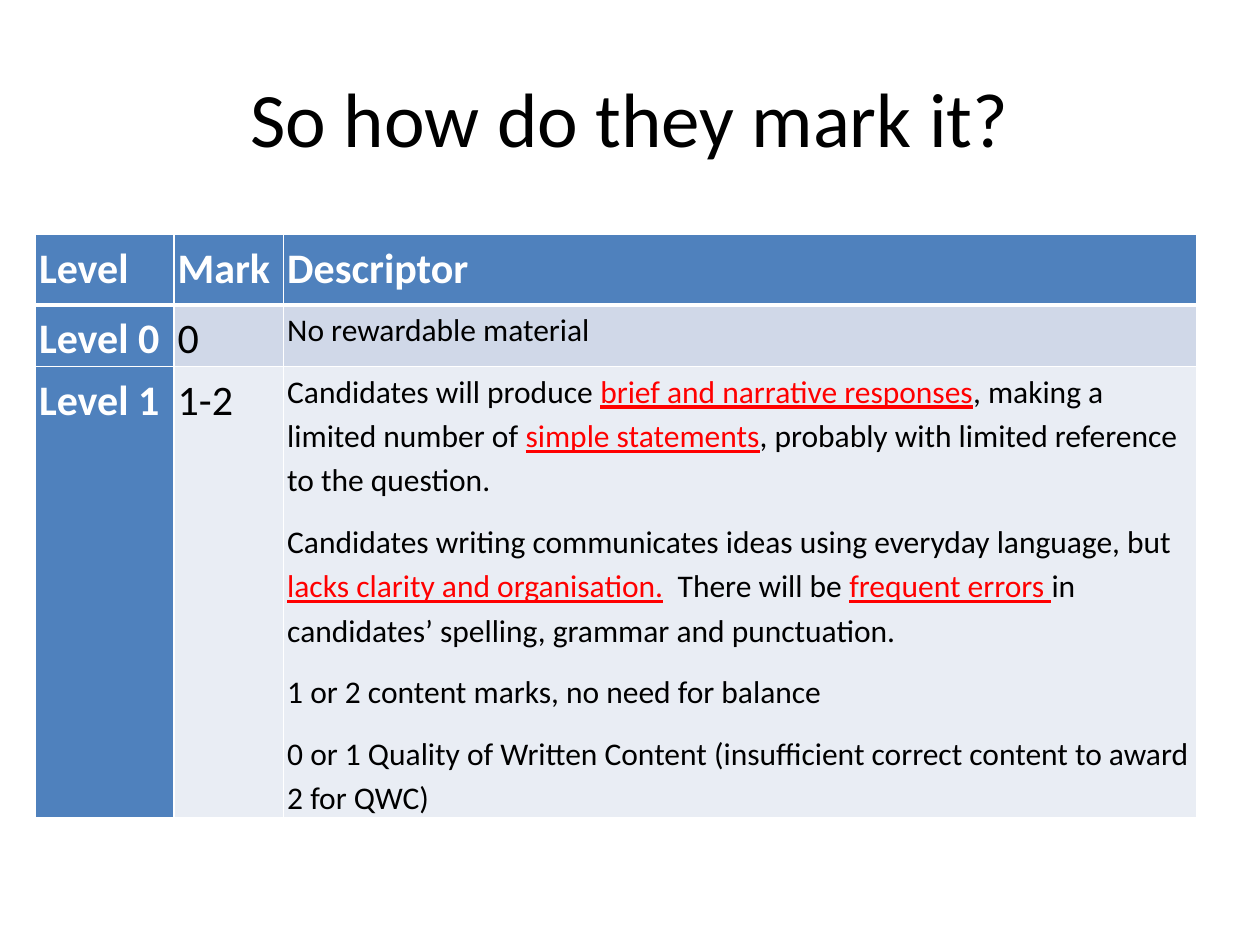
import pptx
import pptx.dml.color
import pptx.enum.text
import pptx.oxml
import pptx.oxml.ns
import pptx.util

Inches = pptx.util.Inches
Pt = pptx.util.Pt

COLORS = {
    "text": "000000",
    "white": "FFFFFF",
    "emphasis": "FF0000",
    "header": "4F81BD",
    "odd_row": "D0D8E8",
    "even_row": "E9EDF4",
}

LEVELS = [
    ("Level", "Mark", [["Descriptor"]]),
    ("Level 0", "0", [["No rewardable material"]]),
    ("Level 1", "1-2", [
        ["Candidates will produce ", "brief and narrative responses",
         ", making a limited number of ", "simple statements",
         ", probably with limited reference to the question."],
        ["Candidates writing communicates ideas using everyday language, but ",
         "lacks clarity and organisation.", "  There will be ", "frequent errors ",
         "in candidates’ spelling, grammar and punctuation."],
        ["1 or 2 content marks, no need for balance"],
        ["0 or 1 Quality of Written Content (insufficient correct content to award 2 for QWC)"],
    ]),
]
COLUMN_WIDTHS = [1.1, 0.87, 7.25]
ROW_HEIGHTS = [0.56, 0.49, 3.58]


def apply(target, values):
    for name, value in values.items():
        setattr(target, name, value)


class MarkSlide:
    font_name = "Calibri"
    cell_format = {
        "margin_left": Inches(0.03),
        "margin_top": Inches(0.01),
        "margin_right": Inches(0.03),
        "margin_bottom": 0,
        "vertical_anchor": pptx.enum.text.MSO_ANCHOR.TOP,
    }
    paragraph_format = {"line_spacing": 1.15, "space_after": Pt(10)}

    def __init__(self, slide):
        self.slide = slide

    def color(self, name):
        return pptx.dml.color.RGBColor.from_string(COLORS[name])

    def run(self, paragraph, text, size, color="text", **font_format):
        run = paragraph.add_run()
        run.text = text
        apply(run.font, {"name": self.font_name, "size": Pt(size), **font_format})
        run.font.color.rgb = self.color(color)

    def title(self, text, left, top, width, height):
        box = self.slide.shapes.add_textbox(
            Inches(left), Inches(top), Inches(width), Inches(height))
        apply(box.text_frame, {
            "word_wrap": True,
            "vertical_anchor": pptx.enum.text.MSO_ANCHOR.MIDDLE,
        })
        heading = box.text_frame.paragraphs[0]
        heading.alignment = pptx.enum.text.PP_ALIGN.CENTER
        self.run(heading, text, 44)

    def borders(self, cell, widths):
        properties = cell._tc.get_or_add_tcPr()
        for side, width in widths.items():
            properties.append(pptx.oxml.parse_xml(
                f'<a:ln{side} {pptx.oxml.ns.nsdecls("a")} w="{Pt(width)}">'
                f'<a:solidFill><a:srgbClr val="{COLORS["white"]}"/></a:solidFill>'
                f'</a:ln{side}>'))

    def cell(self, cell, paragraphs, fill, size, **font_format):
        cell.fill.solid()
        cell.fill.fore_color.rgb = self.color(fill)
        apply(cell, self.cell_format)
        for index, parts in enumerate(paragraphs):
            frame = cell.text_frame
            paragraph = frame.add_paragraph() if index else frame.paragraphs[0]
            apply(paragraph, self.paragraph_format)
            for position, text in enumerate(parts):
                if position % 2:
                    self.run(paragraph, text, size, "emphasis", underline=True)
                else:
                    self.run(paragraph, text, size, **font_format)

    def table(self, levels, left, top, widths, heights):
        table = self.slide.shapes.add_table(
            len(levels), len(widths), Inches(left), Inches(top),
            Inches(sum(widths)), Inches(sum(heights))).table
        for column, width in zip(table.columns, widths):
            column.width = Inches(width)
        for row, height in zip(table.rows, heights):
            row.height = Inches(height)
        for r, (level, mark, descriptor) in enumerate(levels):
            band = "odd_row" if r % 2 else "even_row"
            for c, paragraphs in enumerate([[[level]], [[mark]], descriptor]):
                heading = r == 0 or c == 0
                self.borders(table.cell(r, c), {
                    "L": 1, "R": 1,
                    "T": 3 if r == 1 else 1,
                    "B": 3 if r == 0 else 1,
                })
                self.cell(
                    table.cell(r, c), paragraphs,
                    fill="header" if heading else band,
                    size=18 if r and c == 2 else 24,
                    color="white" if heading else "text",
                    bold=heading)


def main():
    presentation = pptx.Presentation()
    apply(presentation, {"slide_width": Inches(10), "slide_height": Inches(7.5)})
    marking = MarkSlide(presentation.slides.add_slide(presentation.slide_layouts[6]))
    marking.title("So how do they mark it?", 0.5, 0.3, 9, 1.25)
    marking.table(LEVELS, 0.28, 1.86, COLUMN_WIDTHS, ROW_HEIGHTS)
    presentation.save("out.pptx")


if __name__ == "__main__":
    main()
